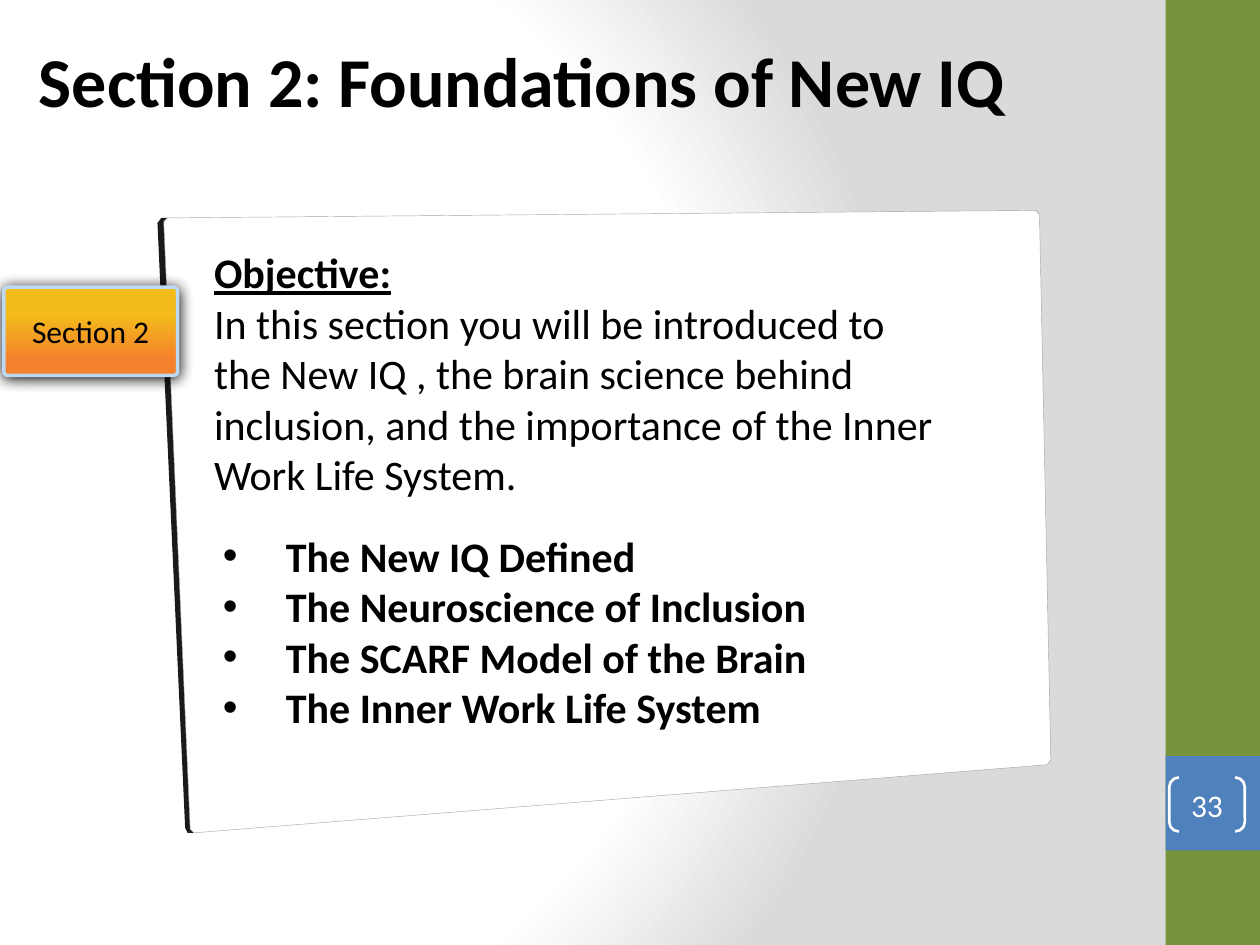
from typing import NamedTuple, Optional

from lxml import etree
from pptx import Presentation
from pptx import util as u
from pptx.dml.color import RGBColor
from pptx.enum import shapes, text
from pptx.oxml import ns, parse_xml

BLACK = RGBColor(0, 0, 0)
WHITE = RGBColor(255, 255, 255)
GREEN = RGBColor(0x77, 0x93, 0x3C)
BLUE = RGBColor(0x4F, 0x81, 0xBD)
PALE = RGBColor(0xBD, 0xD8, 0xF3)
DARK = RGBColor(0x1A, 0x1A, 0x1A)
GREY = RGBColor(0xA6, 0xA6, 0xA6)
ORANGE = RGBColor(0xF5, 0x80, 0x2D)
GOLD = RGBColor(0xF3, 0xBC, 0x1B)
KIND = shapes.MSO_SHAPE

BACK = f"""<a:gradFill {ns.nsdecls('a')} rotWithShape="1"><a:gsLst>
<a:gs pos="0"><a:srgbClr val="FFFFFF"/></a:gs>
<a:gs pos="75000"><a:srgbClr val="FFFFFF"/></a:gs>
<a:gs pos="100000"><a:srgbClr val="DADADA"/></a:gs></a:gsLst>
<a:path path="circle"><a:fillToRect l="20000" t="50000" r="100000" b="50000"/></a:path>
</a:gradFill>"""
SHADOW = f"""<a:outerShdw {ns.nsdecls('a')} blurRad="107950" dist="12700" dir="5400000"
algn="t" rotWithShape="0"><a:srgbClr val="000000"/></a:outerShdw>"""


class Box(NamedTuple):
    left: float
    top: float
    width: float
    height: float

    def place(self) -> list:
        return [u.Inches(n) for n in self]


class Line(NamedTuple):
    words: str
    size: int = 24
    bold: bool = False
    under: bool = False
    bullet: bool = False
    color: RGBColor = BLACK


class Panel(NamedTuple):
    points: list
    fill: RGBColor
    edge: Optional[RGBColor] = None


def write(frame, lines: list, align=text.PP_ALIGN.LEFT) -> None:
    frame.word_wrap = True
    for i, line in enumerate(lines):
        para = frame.add_paragraph() if i else frame.paragraphs[0]
        para.alignment = align
        if line.bullet:
            props = para._p.get_or_add_pPr()
            props.set("marL", str(u.Inches(0.5)))
            props.set("indent", str(u.Inches(-0.5)))
            etree.SubElement(props, ns.qn("a:buFont")).set("typeface", "Arial")
            etree.SubElement(props, ns.qn("a:buChar")).set("char", "•")
        run = para.add_run()
        run.text = line.words
        font = run.font
        font.name, font.size = "Calibri", u.Pt(line.size)
        font.bold, font.underline = line.bold, line.under
        font.color.rgb = line.color


def add_text(slide, box: Box, lines: list) -> None:
    write(slide.shapes.add_textbox(*box.place()).text_frame, lines)


def add_shape(slide, kind, box: Box, fill: Optional[RGBColor] = None):
    shape = slide.shapes.add_shape(kind, *box.place())
    shape.shadow.inherit = False
    if fill is None:
        shape.fill.background()
    else:
        shape.fill.solid()
        shape.fill.fore_color.rgb = fill
    shape.line.fill.background()
    return shape


def add_panel(slide, panel: Panel) -> None:
    first, *rest = [(u.Inches(x), u.Inches(y)) for x, y in panel.points]
    form = slide.shapes.build_freeform(*first)
    form.add_line_segments(rest)
    shape = form.convert_to_shape()
    shape.shadow.inherit = False
    shape.fill.solid()
    shape.fill.fore_color.rgb = panel.fill
    if panel.edge is None:
        shape.line.fill.background()
    else:
        shape.line.color.rgb = panel.edge
        shape.line.width = u.Pt(0.25)


def add_label(shape, line: Line, edge: RGBColor, width: float, adjust: float) -> None:
    shape.adjustments[0] = adjust
    shape.line.color.rgb = edge
    shape.line.width = u.Pt(width)
    frame = shape.text_frame
    frame.vertical_anchor = text.MSO_ANCHOR.MIDDLE
    write(frame, [line], text.PP_ALIGN.CENTER)


def add_tag(slide) -> None:
    tag = add_shape(slide, KIND.ROUNDED_RECTANGLE, Box(0.03, 2.28, 1.38, 0.7))
    tag.fill.gradient()
    tag.fill.gradient_angle = 90
    stops = [(0.17, ORANGE), (0.7, GOLD)]
    for stop, (spot, color) in zip(tag.fill.gradient_stops, stops):
        stop.position, stop.color.rgb = spot, color
    add_label(tag, Line("Section 2", 18), PALE, 2, 0.044)
    tag._element.spPr.find(ns.qn("a:effectLst")).append(parse_xml(SHADOW))


def add_page(slide) -> None:
    page = add_shape(slide, KIND.DOUBLE_BRACKET, Box(9.28, 6.17, 0.6, 0.43))
    frame = page.text_frame
    frame.margin_left = frame.margin_right = frame.margin_top = frame.margin_bottom = 0
    add_label(page, Line("33", 18, color=WHITE), WHITE, 1.5, 0.179)


def main() -> None:
    deck = Presentation()
    deck.slide_width, deck.slide_height = u.Inches(10), u.Inches(7.5)
    slide = deck.slides.add_slide(deck.slide_layouts[6])
    slide.background.fill.solid()
    old = slide._element.find(".//" + ns.qn("p:bgPr")).find(ns.qn("a:solidFill"))
    old.getparent().replace(old, parse_xml(BACK))

    add_shape(slide, KIND.RECTANGLE, Box(9.25, 0, 0.75, 7.5), GREEN)
    add_shape(slide, KIND.RECTANGLE, Box(9.25, 6, 0.75, 0.75), BLUE)
    side = [(1.25, 1.77), (1.28, 1.73), (1.34, 1.73), (1.55, 6.61), (1.49, 6.61), (1.47, 6.57)]
    face = [(1.3, 1.76), (1.33, 1.73), (8.22, 1.67), (8.25, 1.7),
            (8.34, 6.03), (8.31, 6.07), (1.54, 6.61), (1.51, 6.58)]
    for panel in (Panel(side, DARK), Panel(face, WHITE, GREY)):
        add_panel(slide, panel)

    add_text(slide, Box(0.21, 0.25, 8.29, 0.77),
             [Line("Section 2: Foundations of New IQ", 40, bold=True)])
    topics = ["The New IQ Defined", "The Neuroscience of Inclusion",
              "The SCARF Model of the Brain", "The Inner Work Life System"]
    add_text(slide, Box(1.67, 4.16, 5.58, 2.26),
             [Line(topic, bold=True, bullet=True) for topic in topics])
    add_page(slide)
    add_text(slide, Box(1.6, 1.91, 5.92, 2.12), [
        Line("Objective:", bold=True, under=True),
        Line("In this section you will be introduced to the New IQ , the brain science "
             "behind inclusion, and the importance of the Inner Work Life System."),
    ])
    add_tag(slide)
    deck.save("out.pptx")


if __name__ == "__main__":
    main()
